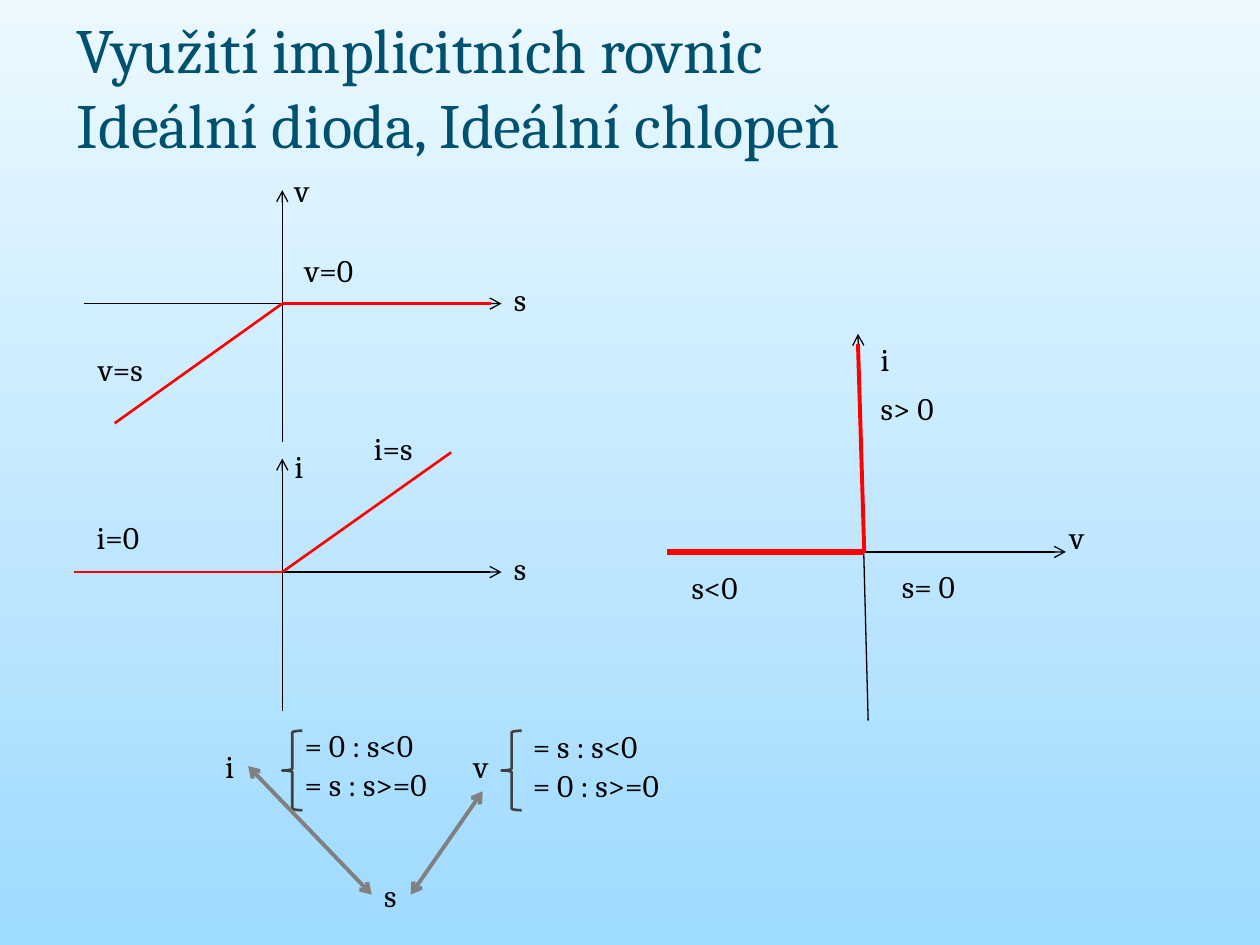
from lxml import etree
from pptx import Presentation
from pptx.dml.color import RGBColor
from pptx.enum.shapes import MSO_CONNECTOR, MSO_SHAPE
from pptx.enum.text import MSO_ANCHOR, MSO_AUTO_SIZE
from pptx.oxml.ns import qn
from pptx.util import Pt

STRAIGHT = MSO_CONNECTOR.STRAIGHT
LEFT_BRACE = MSO_SHAPE.LEFT_BRACE
MIDDLE = MSO_ANCHOR.MIDDLE
FIT_TEXT = MSO_AUTO_SIZE.SHAPE_TO_FIT_TEXT

FONT = "Cambria"
COLORS = {
    "sky_top": "EBF9FF",
    "sky_bottom": "9FDAFF",
    "title": "005070",
    "text": "000000",
    "axis": "000000",
    "curve": "FF0000",
    "link": "808080",
    "brace": "404040",
}
ORIGIN_X = 161.3
LABEL_HEIGHT = 28.8


def color(name):
    """Return the named colour."""
    return RGBColor.from_string(COLORS[name])


def paint_background(slide):
    """Fill the slide background with a vertical gradient."""
    fill = slide.background.fill
    fill.gradient()
    fill.gradient_angle = 270
    for stop, name, position in zip(fill.gradient_stops, ("sky_top", "sky_bottom"), (0, 1)):
        stop.color.rgb = color(name)
        stop.position = position


def add_text(slide, text, left, top, width, height=LABEL_HEIGHT, size=18, name="text", wrap=True):
    """Add a text box and return its text frame."""
    shape = slide.shapes.add_textbox(Pt(left), Pt(top), Pt(width), Pt(height))
    frame = shape.text_frame
    frame.word_wrap = wrap
    frame.text = text
    for run in frame.paragraphs[0].runs:
        run.font.name = FONT
        run.font.size = Pt(size)
        run.font.color.rgb = color(name)
    return frame


def add_label(slide, text, left, top, width, wrap=False):
    """Add a label whose box fits its text."""
    add_text(slide, text, left, top, width, wrap=wrap).auto_size = FIT_TEXT


def add_line(slide, start, end, name, width, arrows=()):
    """Add a straight line with open arrowheads at the listed ends."""
    connector = slide.shapes.add_connector(STRAIGHT, *map(Pt, start + end))
    connector.line.color.rgb = color(name)
    connector.line.width = Pt(width)
    outline = connector.line._get_or_add_ln()
    for arrow in arrows:
        etree.SubElement(outline, qn(f"a:{arrow}"), type="arrow")
    etree.SubElement(connector._element.spPr, qn("a:effectLst"))


def add_axis(slide, start, end):
    """Add a thin axis with an arrow at its end."""
    add_line(slide, start, end, "axis", 0.75, ("tailEnd",))


def add_brace(slide, left):
    """Add a left brace before a pair of cases."""
    shape = slide.shapes.add_shape(LEFT_BRACE, Pt(left), Pt(417.6), Pt(11.5), Pt(45.4))
    shape.shadow.inherit = False
    shape.fill.background()
    shape.line.color.rgb = color("brace")
    shape.line.width = Pt(1.5)


def add_parameter_graph(slide, origin_y, quantity, label_top, curve_ends):
    """Plot a quantity against s as two red segments from the origin."""
    add_axis(slide, (48.2, origin_y), (286.6, origin_y))
    add_axis(slide, (ORIGIN_X, origin_y + 79.2), (ORIGIN_X, origin_y - 64.8))
    add_label(slide, "s", 286.6, origin_y - 16.8, 22.3)
    add_label(slide, quantity, ORIGIN_X, label_top, 22)
    for end in curve_ends:
        add_line(slide, (ORIGIN_X, origin_y), end, "curve", 1.5)


def add_characteristic(slide):
    """Plot the i-v characteristic of the ideal diode."""
    add_axis(slide, (496.1, 411.8), (490.3, 190.8))
    add_axis(slide, (382.3, 315.4), (609.1, 315.4))
    add_line(slide, (380.9, 315.4), (493.9, 315.4), "curve", 3)
    add_line(slide, (493.9, 316.1), (490.3, 196.6), "curve", 2.25)
    for text, left, top, width in (
        ("i", 496.1, 190.8, 39.6),
        ("v", 604.1, 292.3, 39.6),
        ("s<0", 388.1, 321.1, 118.8),
        ("s> 0", 496.1, 218.9, 118.8),
        ("s= 0", 508.3, 320.4, 118.8),
    ):
        add_label(slide, text, left, top, width, wrap=True)


def add_cases(slide, brace_left, text_left, top, width, cases):
    """Add a brace with two stacked cases."""
    add_brace(slide, brace_left)
    for row, case in enumerate(cases):
        add_label(slide, case, text_left, top + row * 22.3, width, wrap=True)


def add_equations(slide):
    """Show how i and v both follow from s."""
    add_label(slide, "i", 121.7, 423.4, 20.2)
    add_label(slide, "v", 263.5, 423.4, 25.2, wrap=True)
    add_label(slide, "s", 212.4, 496.8, 22.3)
    add_cases(slide, 161.3, 167, 411.1, 96.5, ("= 0 : s<0", "= s : s>=0"))
    add_cases(slide, 286.6, 297.4, 411.8, 147.6, ("= s : s<0", "= 0 : s>=0"))
    for start, end in (((141.8, 437.8), (212.4, 511.2)), ((275.8, 452.2), (234.7, 511.2))):
        add_line(slide, start, end, "link", 2.25, ("headEnd", "tailEnd"))


def main():
    """Build the slide and save it."""
    presentation = Presentation()
    presentation.slide_width, presentation.slide_height = Pt(720), Pt(540)
    slide = presentation.slides.add_slide(presentation.slide_layouts[6])
    paint_background(slide)
    title = "Využití implicitních rovnic\vIdeální dioda, Ideální chlopeň"
    frame = add_text(slide, title, 36.7, 9.4, 647.3, 79.2, 36, "title")
    frame.vertical_anchor = MIDDLE
    add_characteristic(slide)
    add_equations(slide)
    add_parameter_graph(slide, 173.5, "v", 94.3, ((280.8, 173.5), (65.5, 241.9)))
    add_parameter_graph(slide, 326.9, "i", 252, ((257.8, 258.5), (42.5, 326.9)))
    for text, left, top, width in (
        ("v=s", 49, 196.6, 43.2),
        ("v=0", 167, 139.7, 46.8),
        ("i=0", 48.2, 292.3, 42.5),
        ("i=s", 206.6, 241.9, 39.6),
    ):
        add_label(slide, text, left, top, width)
    presentation.save("out.pptx")


if __name__ == "__main__":
    main()
